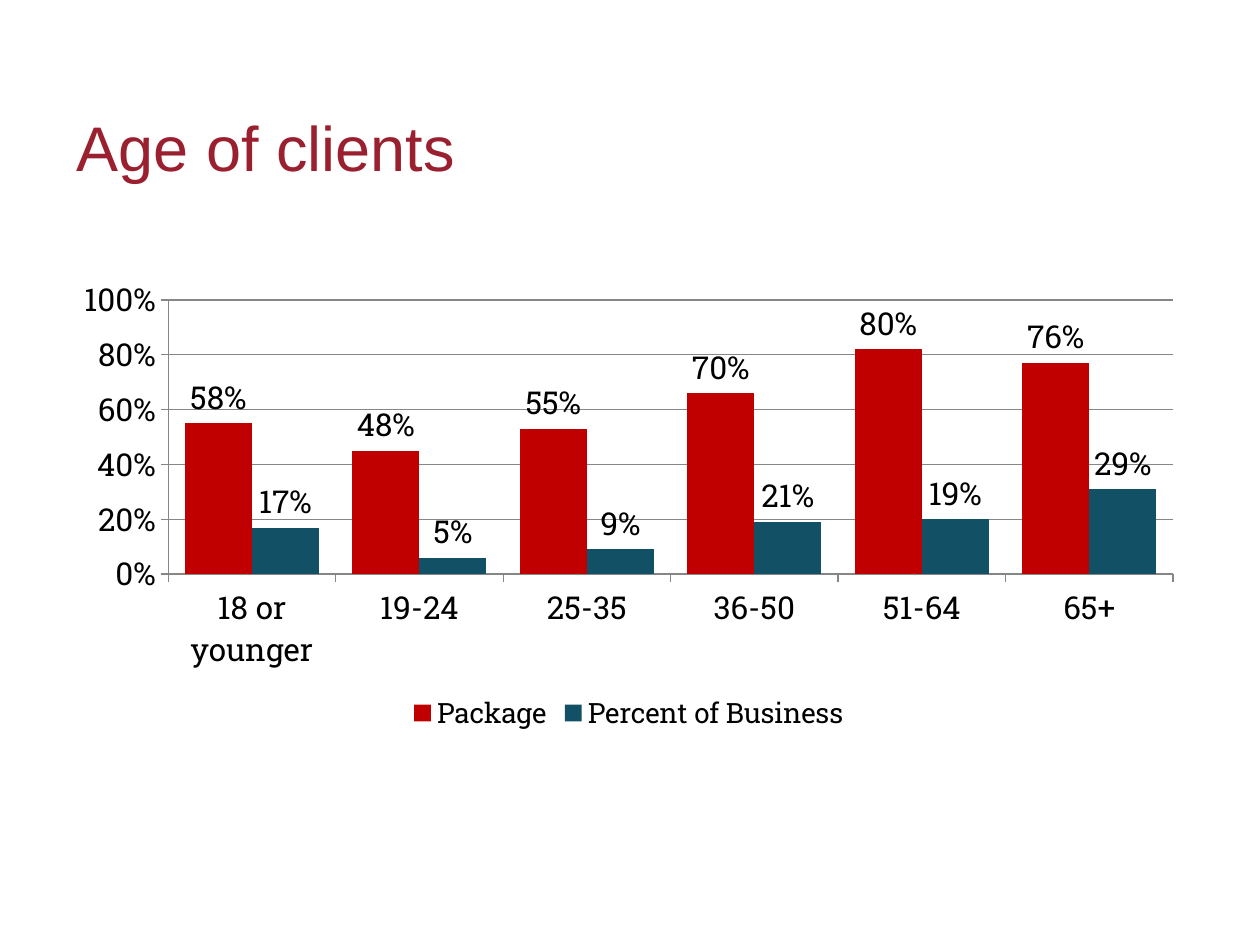
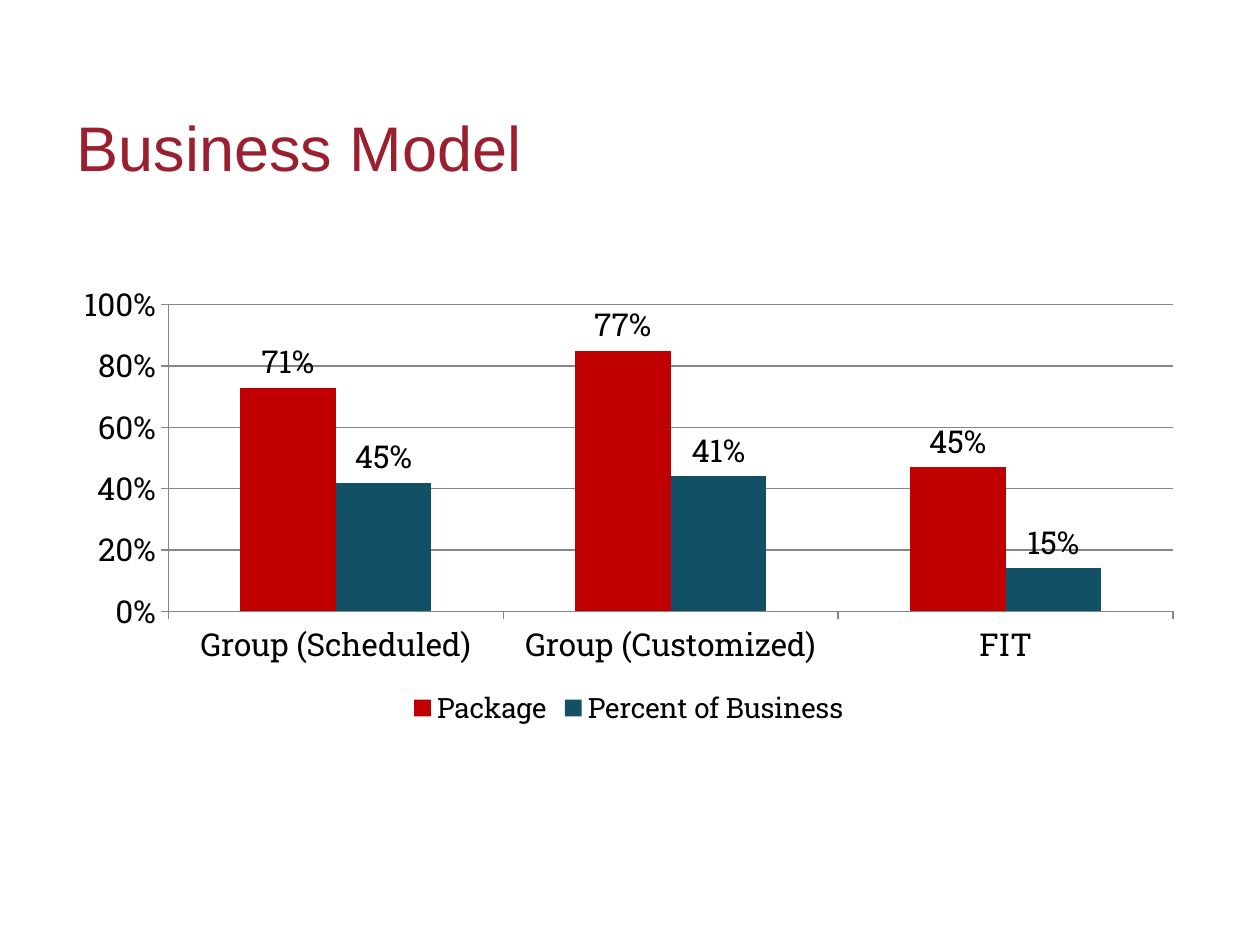
"""Build two survey slides, each with a title and a clustered column chart."""
from dataclasses import dataclass

from pptx import Presentation
from pptx.chart.chart import Chart
from pptx.chart.data import CategoryChartData
from pptx.dml.color import RGBColor
from pptx.enum.chart import XL_CHART_TYPE, XL_LABEL_POSITION, XL_LEGEND_POSITION, XL_TICK_MARK
from pptx.enum.text import MSO_ANCHOR, MSO_AUTO_SIZE, PP_ALIGN
from pptx.slide import Slide
from pptx.util import Inches, Pt

COLUMNS = XL_CHART_TYPE.COLUMN_CLUSTERED
OUTSIDE_END = XL_LABEL_POSITION.OUTSIDE_END
LEGEND_BOTTOM = XL_LEGEND_POSITION.BOTTOM
TICK_OUT = XL_TICK_MARK.OUTSIDE
TICK_NONE = XL_TICK_MARK.NONE
TOP = MSO_ANCHOR.TOP
NO_AUTOFIT = MSO_AUTO_SIZE.NONE
LEFT = PP_ALIGN.LEFT

TITLE_FONT, CHART_FONT = "Arial", "Roboto Slab"
TITLE_RED, TEXT, GRID = "9B202F", "000000", "868686"
PERCENT = "0%"
CHART_LEFT, CHART_WIDTH = 0.49, 9


@dataclass(frozen=True)
class Series:
    """One set of columns, with label wording by category index."""
    name: str
    color: str
    values: tuple[float, ...]
    labels: dict[int, str]


@dataclass(frozen=True)
class ChartSlide:
    """A slide's title, chart placement and data."""
    title: str
    top: float
    height: float
    gap: int
    categories: tuple[str, ...]
    series: tuple[Series, ...]


def package(values: tuple[float, ...], labels: dict[int, str]) -> Series:
    """Return the package series."""
    return Series("Package", "C00000", values, labels)


def business(values: tuple[float, ...], labels: dict[int, str]) -> Series:
    """Return the share of business series."""
    return Series("Percent of Business", "125066", values, labels)


SLIDES = (
    ChartSlide(
        "Age of clients", 2.14, 3.71, 50,
        ("18 or younger", "19-24", "25-35", "36-50", "51-64", "65+"),
        (package((0.55, 0.45, 0.53, 0.66, 0.82, 0.77),
                 {0: "58%", 1: "48%", 2: "55%", 3: "70%", 4: "80%", 5: "76%"}),
         business((0.17, 0.06, 0.09, 0.19, 0.2, 0.31),
                  {1: "5%", 3: "21%", 4: "19%", 5: "29%"})),
    ),
    ChartSlide(
        "Business Model", 2.18, 3.63, 150,
        ("Group (Scheduled)", "Group (Customized)", "FIT"),
        (package((0.73, 0.85, 0.47), {0: "71%", 1: "77%", 2: "45%"}),
         business((0.42, 0.44, 0.14), {0: "45%", 1: "41%", 2: "15%"})),
    ),
)


def rgb(color: str) -> RGBColor:
    """Turn a hex string into a colour."""
    return RGBColor.from_string(color)


def set_font(font, name: str, size: int, color: str) -> None:
    """Set a font's name, size and colour."""
    font.name, font.size = name, Pt(size)
    font.color.rgb = rgb(color)


def add_title(s: Slide, text: str) -> None:
    """Place and format the title placeholder."""
    sp = s.shapes.title
    sp.left, sp.top, sp.width, sp.height = map(Inches, (0.51, 0.76, 9.2, 1.22))
    tf = sp.text_frame
    tf.auto_size, tf.vertical_anchor = NO_AUTOFIT, TOP
    tf.margin_top = Inches(0.1)
    tf.text = text
    p = tf.paragraphs[0]
    p.alignment = LEFT
    set_font(p.font, TITLE_FONT, 36, TITLE_RED)


def style_axes(chart: Chart) -> None:
    """Format both axes and the gridlines."""
    axis = chart.value_axis
    axis.minimum_scale, axis.maximum_scale, axis.major_unit = 0, 1, 0.2
    axis.tick_labels.number_format = PERCENT
    axis.tick_labels.number_format_is_linked = False
    axis.major_gridlines.format.line.color.rgb = rgb(GRID)
    for ax in (axis, chart.category_axis):
        ax.major_tick_mark, ax.minor_tick_mark = TICK_OUT, TICK_NONE
        ax.format.line.color.rgb = rgb(GRID)
        set_font(ax.tick_labels.font, CHART_FONT, 18, TEXT)


def style_series(plotted, series: Series) -> None:
    """Colour one series and write its labels."""
    plotted.format.fill.solid()
    plotted.format.fill.fore_color.rgb = rgb(series.color)
    labels = plotted.data_labels
    labels.show_value, labels.position = True, OUTSIDE_END
    labels.number_format, labels.number_format_is_linked = PERCENT, False
    set_font(labels.font, CHART_FONT, 18, TEXT)
    for i, text in series.labels.items():
        label = plotted.points[i].data_label
        r = label.text_frame.paragraphs[0].add_run()
        r.text = text
        set_font(r.font, CHART_FONT, 18, TEXT)
        label.position = OUTSIDE_END


def add_column_chart(s: Slide, spec_: ChartSlide) -> None:
    """Add the slide's column chart."""
    data = CategoryChartData(number_format=PERCENT)
    data.categories = spec_.categories
    for series in spec_.series:
        data.add_series(series.name, series.values)
    box = map(Inches, (CHART_LEFT, spec_.top, CHART_WIDTH, spec_.height))
    chart = s.shapes.add_chart(COLUMNS, *box, data).chart
    chart.has_title = False
    set_font(chart.font, CHART_FONT, 18, TEXT)
    chart.has_legend = True
    chart.legend.position, chart.legend.include_in_layout = LEGEND_BOTTOM, False
    set_font(chart.legend.font, CHART_FONT, 16, TEXT)
    style_axes(chart)
    plot = chart.plots[0]
    plot.gap_width, plot.overlap, plot.vary_by_categories = spec_.gap, 0, False
    for plotted, series in zip(plot.series, spec_.series):
        style_series(plotted, series)


def main() -> None:
    """Build and save the presentation."""
    prs = Presentation()
    prs.slide_width, prs.slide_height = Inches(10), Inches(7.5)
    for content in SLIDES:
        s = prs.slides.add_slide(prs.slide_layouts[5])
        add_title(s, content.title)
        add_column_chart(s, content)
    prs.save("out.pptx")


if __name__ == "__main__":
    main()
